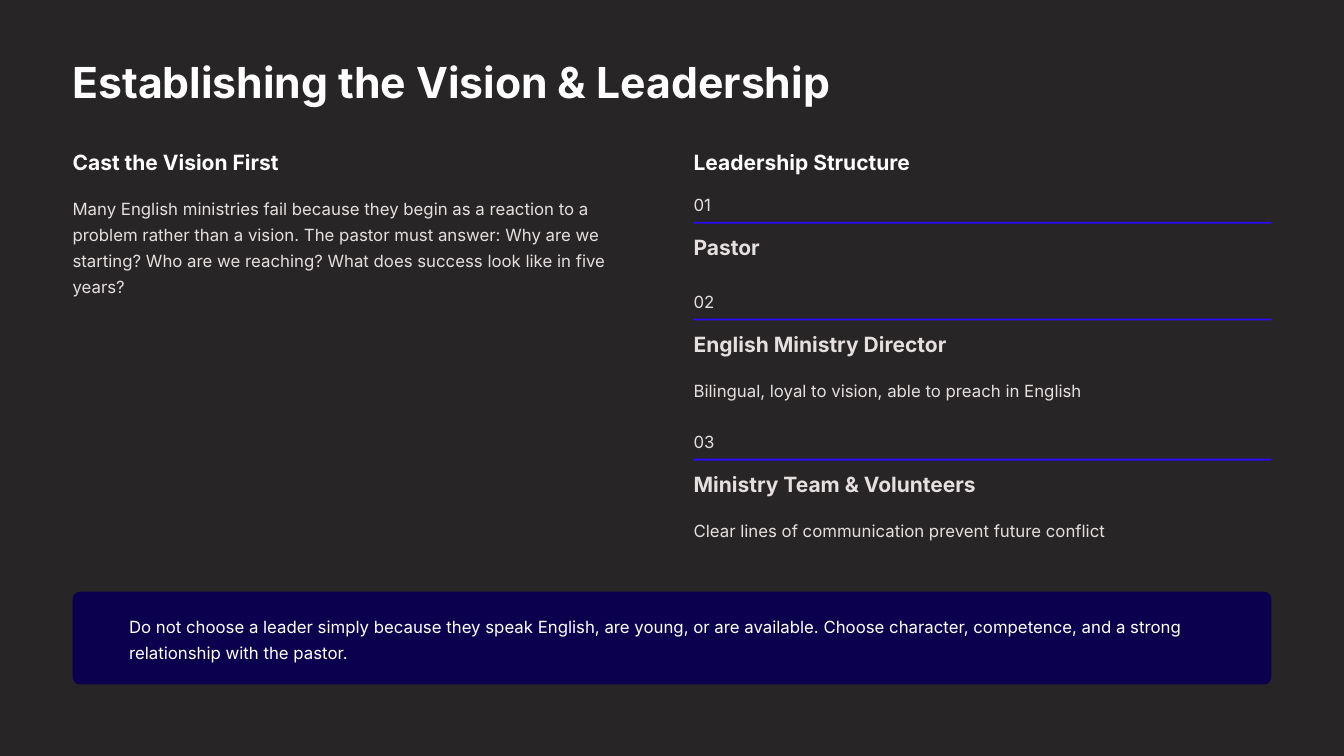
from pptx import Presentation
from pptx.dml.color import RGBColor
from pptx.enum.shapes import MSO_SHAPE
from pptx.enum.text import MSO_ANCHOR
from pptx.util import Inches, Pt

COLORS = {"back": "272525", "white": "FFFFFF", "soft": "E5E0DF",
          "rule": "2B0AFF", "callout": "0A004D"}

# Two equal columns between the side margins
WIDTH, HEIGHT = 13.33, 7.5
MARGIN, GUTTER = 0.72, 0.43
CONTENT = WIDTH - 2 * MARGIN
COL = (CONTENT - GUTTER) / 2
LEFT, RIGHT = MARGIN, MARGIN + COL + GUTTER
HEADING_TOP, BODY_TOP = 1.47, 1.91
LINE = 0.27

prs = Presentation()
prs.slide_width, prs.slide_height = Inches(WIDTH), Inches(HEIGHT)
slide = prs.slides.add_slide(prs.slide_layouts[6])
slide.background.fill.solid()
slide.background.fill.fore_color.rgb = RGBColor.from_string(COLORS["back"])


def add_text(text, x, y, w, h, size=12, color="soft", bold=False,
             spacing=1.3, wrap=False, anchor=MSO_ANCHOR.TOP):
    tf = slide.shapes.add_textbox(*map(Inches, (x, y, w, h))).text_frame
    tf.margin_left = tf.margin_top = tf.margin_right = tf.margin_bottom = 0
    tf.word_wrap = wrap
    tf.vertical_anchor = anchor
    p = tf.paragraphs[0]
    p.line_spacing = spacing
    r = p.add_run()
    r.text = text
    r.font.name = "Inter"
    r.font.size = Pt(size)
    r.font.bold = bold
    r.font.color.rgb = RGBColor.from_string(COLORS[color])


def add_block(kind, x, y, w, h, color):
    sp = slide.shapes.add_shape(kind, *map(Inches, (x, y, w, h)))
    sp.shadow.inherit = False
    sp.fill.solid()
    sp.fill.fore_color.rgb = RGBColor.from_string(COLORS[color])
    sp.line.fill.background()
    return sp


heading = dict(size=15, bold=True, spacing=1.04)

add_text("Establishing the Vision & Leadership", LEFT, 0.53, 8.3, 2 * LINE,
         size=30.5, color="white", bold=True, spacing=1.04)

for x, title in ((LEFT, "Cast the Vision First"), (RIGHT, "Leadership Structure")):
    add_text(title, x, HEADING_TOP, COL, LINE, color="white", **heading)

add_text("Many English ministries fail because they begin as a reaction to a "
         "problem rather than a vision. The pastor must answer: Why are we "
         "starting? Who are we reaching? What does success look like in five "
         "years?", LEFT, BODY_TOP, COL, 4 * LINE, wrap=True)

# Each role: number, rule, title and, where there is one, a detail line
roles = [
    ("Pastor", ""),
    ("English Ministry Director", "Bilingual, loyal to vision, able to preach in English"),
    ("Ministry Team & Volunteers", "Clear lines of communication prevent future conflict"),
]
y = 1.93
for number, (role, detail) in enumerate(roles, start=1):
    add_text(f"{number:02d}", RIGHT, y, 0.34, 0.21, spacing=1.0,
             anchor=MSO_ANCHOR.MIDDLE)
    add_block(MSO_SHAPE.RECTANGLE, RIGHT, y + LINE, COL, 0.02, "rule")
    add_text(role, RIGHT, y + 0.39, COL, LINE, **heading)
    y += 0.96
    if detail:
        add_text(detail, RIGHT, y - 0.13, COL, LINE)
        y += 0.43

callout = add_block(MSO_SHAPE.ROUNDED_RECTANGLE, LEFT, 5.87, CONTENT, 0.92, "callout")
callout.adjustments[0] = 0.08
add_text("Do not choose a leader simply because they speak English, are young, "
         "or are available. Choose character, competence, and a strong "
         "relationship with the pastor.", LEFT + 0.56, 6.06, 11.16, 2 * LINE,
         color="white", wrap=True)

prs.save("out.pptx")
